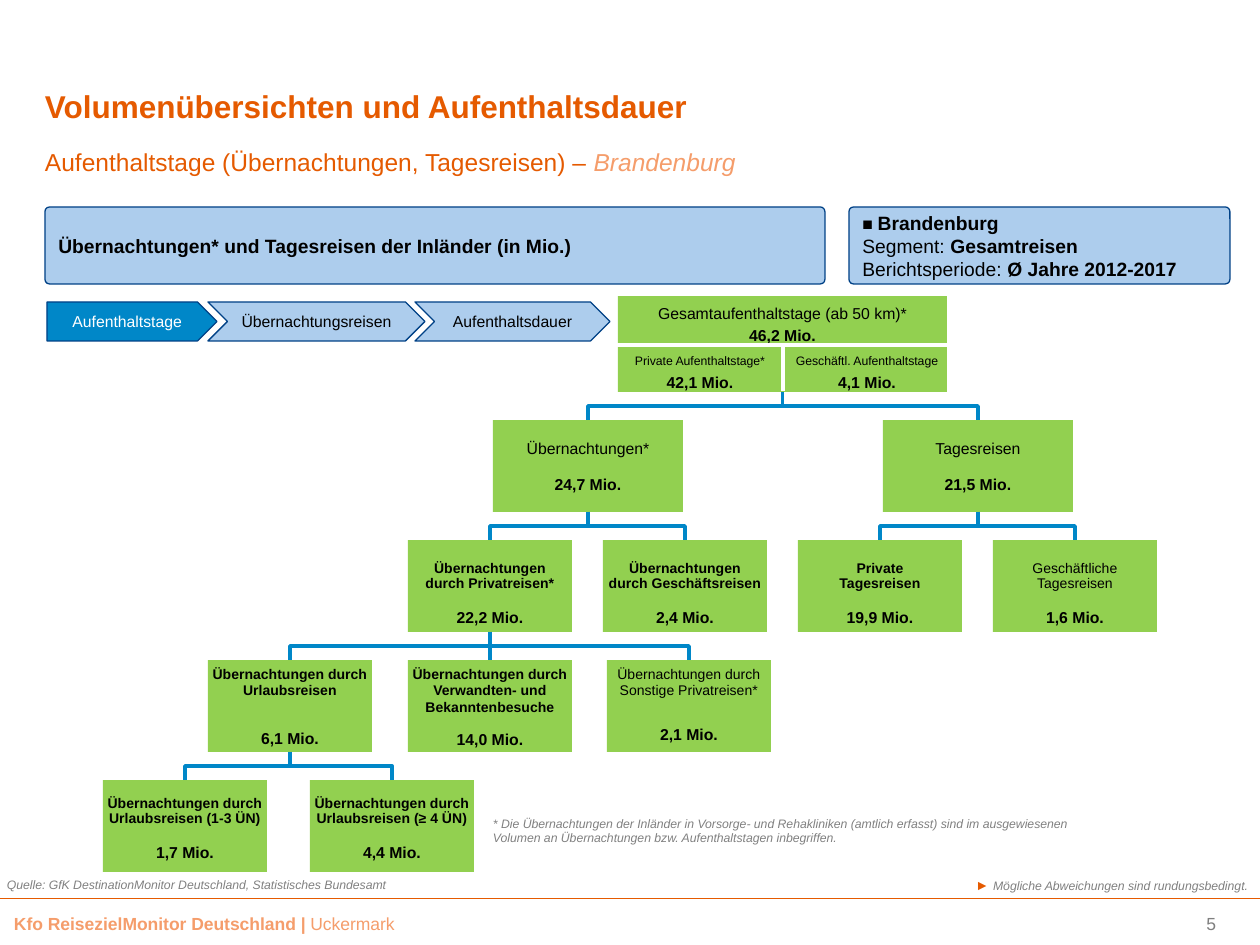
import pptx
import pptx.dml.color
import pptx.enum.shapes
import pptx.enum.text
import pptx.oxml
import pptx.oxml.ns
import pptx.util
from dataclasses import dataclass
from lxml import etree

SHAPE = pptx.enum.shapes.MSO_SHAPE
ALIGN = pptx.enum.text.PP_ALIGN
ANCHOR = pptx.enum.text.MSO_ANCHOR
PX = 914400 / 126


@dataclass(frozen=True)
class Theme:
    font: str = "Arial"
    orange: str = "E55A00"
    peach: str = "F59D6B"
    green: str = "92D050"
    blue: str = "0087C8"
    pale: str = "ADCDED"
    navy: str = "004186"
    gray: str = "808080"
    black: str = "000000"
    white: str = "FFFFFF"
    title: int = 18
    subtitle: int = 14
    panel: int = 11
    footer: int = 10
    value: int = 9
    label: int = 8
    note: int = 7


T = Theme()


def span(text, size, color=T.black, bold=False, italic=False):
    return text, size, color, bold, italic


# Content
TITLE = [[span("Volumenübersichten und Aufenthaltsdauer", T.title, T.orange, True)]]
SUBTITLE = [[span("Aufenthaltstage (Übernachtungen, Tagesreisen) – ", T.subtitle, T.orange),
             span("Brandenburg", T.subtitle, T.peach, italic=True)]]
PANELS = [  # left, width, paragraphs
    (45, 780, [[span("Übernachtungen* und Tagesreisen der Inländer (in Mio.)", T.panel, bold=True)]]),
    (849, 381, [[span("■ ", T.footer, bold=True), span("Brandenburg", T.panel, bold=True)],
                [span("Segment: ", T.panel), span("Gesamtreisen", T.panel, bold=True)],
                [span("Berichtsperiode: ", T.panel), span("Ø Jahre 2012-2017", T.panel, bold=True)]]),
]
STEPS = [  # label, left, width, shape, fill, text colour
    ("Aufenthaltstage", 47, 170, SHAPE.PENTAGON, T.blue, T.white),
    ("Übernachtungsreisen", 208, 217, SHAPE.CHEVRON, T.pale, T.black),
    ("Aufenthaltsdauer", 415, 195, SHAPE.CHEVRON, T.pale, T.black),
]
ROOT = ("Gesamtaufenthaltstage (ab 50 km)*", "46,2 Mio.")
ROOT_PARTS = [  # label, value, left, top, width
    ("Private Aufenthaltstage*", "42,1 Mio.", 606, 347, 188),
    ("Geschäftl. Aufenthaltstage", "4,1 Mio.", 774, 347, 186),
]
LEVELS = [  # box width, label size, inset above, line spacing
    (190, T.value, 21, 0.9),
    (164, T.label, 21, 0.9),
    (164, T.label, 5, 1.0),
    (164, T.label, 16, 0.9),
]
GAP = 10.5
NODES = [  # key, parent, level, left, label, bold label, value, points above value
    ("nights", "root", 0, 493, "Übernachtungen*", False, "24,7 Mio.", GAP),
    ("days", "root", 0, 883, "Tagesreisen", False, "21,5 Mio.", GAP),
    ("private", "nights", 1, 408, "Übernachtungen\vdurch Privatreisen*", True, "22,2 Mio.", GAP),
    ("business", "nights", 1, 603, "Übernachtungen\vdurch Geschäftsreisen", True, "2,4 Mio.", GAP),
    ("private days", "days", 1, 798, "Private\vTagesreisen", True, "19,9 Mio.", GAP),
    ("business days", "days", 1, 993, "Geschäftliche\vTagesreisen", False, "1,6 Mio.", GAP),
    ("holiday", "private", 2, 208, "Übernachtungen durch\vUrlaubsreisen", True, "6,1 Mio.", 17),
    ("visits", "private", 2, 408, "Übernachtungen durch\vVerwandten- und\vBekanntenbesuche", True,
     "14,0 Mio.", 8),
    ("other", "private", 2, 607, "Übernachtungen durch\vSonstige Privatreisen*", False, "2,1 Mio.", 15),
    ("short", "holiday", 3, 103, "Übernachtungen durch\vUrlaubsreisen (1-3 ÜN)", True, "1,7 Mio.", GAP),
    ("long", "holiday", 3, 310, "Übernachtungen durch\vUrlaubsreisen (≥ 4 ÜN)", True, "4,4 Mio.", GAP),
]
NOTES = [  # left, top, width, height, alignment, spans
    (481, 810, 610, 43, ALIGN.LEFT, [span(
        "* Die Übernachtungen der Inländer in Vorsorge- und Rehakliniken (amtlich erfasst) sind im "
        "ausgewiesenen Volumen an Übernachtungen bzw. Aufenthaltstagen inbegriffen.",
        T.note, T.gray, italic=True)]),
    (-5, 871, 605, 29, ALIGN.LEFT, [span(
        "Quelle: GfK DestinationMonitor Deutschland, Statistisches Bundesamt", T.note, T.gray, italic=True)]),
    (829, 871, 431, 27, ALIGN.RIGHT, [
        span("► ", T.label, T.orange),
        span("Mögliche Abweichungen sind rundungsbedingt.", T.note, T.gray, italic=True)]),
    (2, 907, 848, 34, ALIGN.LEFT, [
        span("Kfo ReisezielMonitor Deutschland | ", T.footer, T.peach, True),
        span("Uckermark", T.footer, T.peach)]),
    (1037, 907, 191, 33, ALIGN.RIGHT, [span("5", T.footer, "7F7F7F")]),
]


def px(value):
    return round(value * PX)


def rgb(color):
    return pptx.dml.color.RGBColor.from_string(color)


def write(box, paragraphs, align=ALIGN.LEFT, anchor=ANCHOR.TOP, insets=(12, 6, 12, 6), gap=0, spacing=1.0):
    frame = box.text_frame
    frame.word_wrap = True
    frame.auto_size = pptx.enum.text.MSO_AUTO_SIZE.NONE
    frame.vertical_anchor = anchor
    frame.margin_left, frame.margin_top, frame.margin_right, frame.margin_bottom = map(px, insets)
    for index, spans in enumerate(paragraphs):
        para = frame.add_paragraph() if index else frame.paragraphs[0]
        para.alignment = align
        para.line_spacing = spacing
        para.space_before = pptx.util.Pt(gap if index else 0)
        for text, size, color, bold, italic in spans:
            for number, line in enumerate(text.split("\v")):
                if number:
                    para.add_line_break()
                run = para.add_run()
                run.text = line
                run.font.name, run.font.size = T.font, pptx.util.Pt(size)
                run.font.bold, run.font.italic = bold, italic
                run.font.color.rgb = rgb(color)


def place(box, left, top, width, height):
    box.left, box.top, box.width, box.height = map(px, (left, top, width, height))
    return box


def add_box(page, kind, area, fill, line=None):
    box = page.shapes.add_shape(kind, *map(px, area))
    box.shadow.inherit = False
    box.fill.solid()
    box.fill.fore_color.rgb = rgb(fill)
    if line:
        box.line.color.rgb = rgb(line)
        box.line.width = pptx.util.Pt(0.75)
    else:
        box.line.fill.background()
    return box


def add_line(page, start, end, color, width):
    line = page.shapes.add_connector(pptx.enum.shapes.MSO_CONNECTOR.STRAIGHT, *map(px, start + end))
    line.line.color.rgb = rgb(color)
    line.line.width = pptx.util.Pt(width)
    etree.SubElement(line._element.spPr, pptx.oxml.ns.qn("a:effectLst"))


def add_branch(page, parent, child):
    start_x, start_y = parent.left + parent.width // 2, parent.top + parent.height
    end_x, end_y = child.left + child.width // 2, child.top
    middle = (start_y + end_y) // 2
    builder = page.shapes.build_freeform(start_x, start_y)
    builder.add_line_segments([(start_x, middle), (end_x, middle), (end_x, end_y)], close=False)
    branch = builder.convert_to_shape()
    branch.shadow.inherit = False
    branch.fill.background()
    branch.line.color.rgb = rgb(T.blue)
    branch.line.width = pptx.util.Pt(2)


def main():
    deck = pptx.Presentation()
    deck.slide_width, deck.slide_height = px(1260), px(945)
    page = deck.slides.add_slide(deck.slide_layouts[1])

    # Title and subtitle
    write(place(page.shapes.title, 45, 35, 873, 90), TITLE, anchor=ANCHOR.BOTTOM, insets=(0, 0, 0, 0))
    subtitle = place(page.placeholders[1], 45, 147, 1170, 39)
    properties = subtitle.text_frame.paragraphs[0]._p.get_or_add_pPr()
    properties.set("marL", "0")
    properties.set("indent", "0")
    etree.SubElement(properties, pptx.oxml.ns.qn("a:buNone"))
    write(subtitle, SUBTITLE, insets=(0, 0, 0, 0))

    # Header panels and step arrows
    for left, width, paragraphs in PANELS:
        panel = add_box(page, SHAPE.ROUNDED_RECTANGLE, (left, 207, width, 77), T.pale, T.navy)
        panel.adjustments[0] = 0.06
        write(panel, paragraphs, anchor=ANCHOR.MIDDLE)
    for label, left, width, kind, fill, color in STEPS:
        step = add_box(page, kind, (left, 302, width, 39), fill, T.navy)
        write(step, [[span(label, T.value, color)]], ALIGN.CENTER, ANCHOR.MIDDLE, (0, 0, 0, 0))

    # Root box with its two parts
    root = add_box(page, SHAPE.RECTANGLE, (618, 296, 329, 96), T.green)
    write(root, [[span(ROOT[0], T.value)], [span(ROOT[1], T.value, bold=True)]],
          ALIGN.CENTER, insets=(5, 5, 5, 5), gap=0.5, spacing=1.14)
    add_line(page, (614, 345), (951, 345), T.white, 2)
    add_line(page, (783, 345), (783, 391), T.white, 2)
    for label, value, left, top, width in ROOT_PARTS:
        part = page.shapes.add_textbox(*map(px, (left, top, width, 50)))
        write(part, [[span(label, T.note)], [span(value, T.value, bold=True)]],
              ALIGN.CENTER, insets=(5, 6, 5, 6), gap=3)

    # Tree
    boxes = {"root": root}
    for key, parent, level, left, label, bold, value, gap in NODES:
        width, size, inset, spacing = LEVELS[level]
        boxes[key] = add_box(page, SHAPE.RECTANGLE, (left, 420 + 120 * level, width, 92), T.green)
        write(boxes[key], [[span(label, size, bold=bold)], [span(value, T.value, bold=True)]],
              ALIGN.CENTER, insets=(3, inset, 3, 3), gap=gap, spacing=spacing)
        add_branch(page, boxes[parent], boxes[key])

    # Notes and footer
    add_line(page, (0, 898), (1260, 898), T.orange, 0.55)
    for left, top, width, height, align, spans in NOTES:
        write(page.shapes.add_textbox(*map(px, (left, top, width, height))), [spans], align)

    deck.save("out.pptx")


if __name__ == "__main__":
    main()
